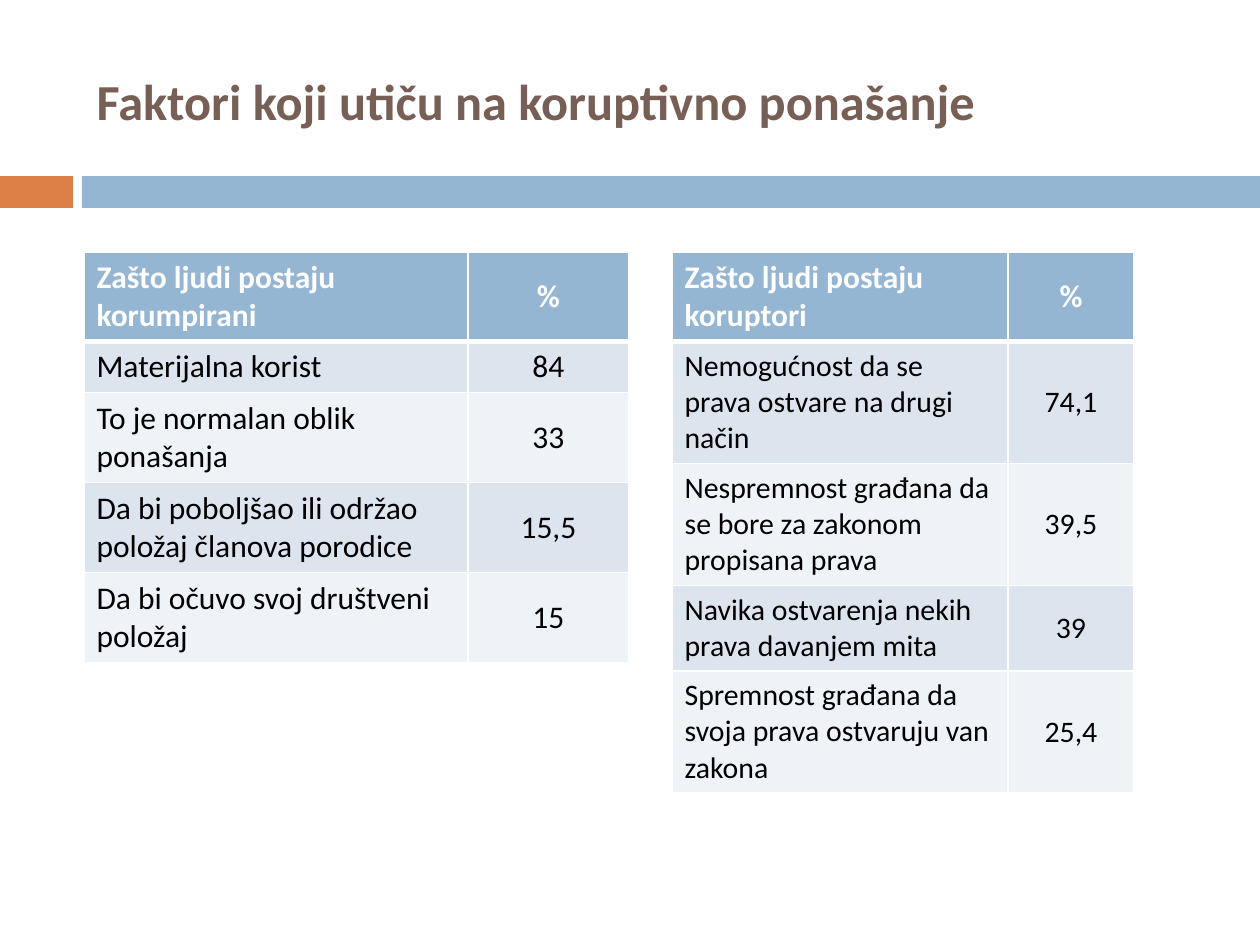
from lxml.etree import SubElement
from pptx import Presentation
from pptx.dml.color import RGBColor
from pptx.enum.shapes import MSO_SHAPE as Shape
from pptx.enum.text import MSO_ANCHOR as Anchor, MSO_AUTO_SIZE as AutoSize, PP_ALIGN as Align
from pptx.oxml.ns import qn
from pptx.util import Emu, Pt

COLORS = {
    "title": "775F55", "accent": "DD8047", "blue": "94B6D2", "white": "FFFFFF",
    "text": "000000", "odd": "DCE5EE", "even": "EEF3F7",
}
SCALE = 914400 / 126

RECIPIENTS = [
    ("Zašto ljudi postaju korumpirani", "%"),
    ("Materijalna korist", "84"),
    ("To je normalan oblik ponašanja", "33"),
    ("Da bi poboljšao ili održao položaj članova porodice", "15,5"),
    ("Da bi očuvo svoj društveni položaj", "15"),
]
GIVERS = [
    ("Zašto ljudi postaju koruptori", "%"),
    ("Nemogućnost da se prava ostvare na drugi način", "74,1"),
    ("Nespremnost građana da se bore za zakonom propisana prava", "39,5"),
    ("Navika ostvarenja nekih prava davanjem mita", "39"),
    ("Spremnost građana da svoja prava ostvaruju van zakona", "25,4"),
]


def px(n):
    return Emu(round(n * SCALE))


def rgb(name):
    return RGBColor.from_string(COLORS[name])


def write(tf, text, size=18, color="text", bold=False, align=Align.LEFT):
    p = tf.paragraphs[0]
    p.alignment = align
    r = p.add_run()
    r.text = text
    r.font.name = "Calibri"
    r.font.size = Pt(size)
    r.font.bold = bold
    r.font.color.rgb = rgb(color)


def add_borders(cell, bottom=1, top=1):
    """Draw white cell borders; top and bottom widths are in points."""
    tc_pr = cell._tc.get_or_add_tcPr()
    for side, width in (("L", 1), ("R", 1), ("T", top), ("B", bottom)):
        ln = SubElement(tc_pr, qn(f"a:ln{side}"), w=str(Pt(width)))
        fill = SubElement(ln, qn("a:solidFill"))
        SubElement(fill, qn("a:srgbClr"), val=COLORS["white"])


class SlideBuilder:
    def __init__(self, slide, header_size=18):
        self.slide = slide
        self.header_size = header_size

    def title(self, text, x, y, w, h):
        sp = self.slide.shapes.title
        sp.left, sp.top, sp.width, sp.height = map(px, (x, y, w, h))
        tf = sp.text_frame
        tf.word_wrap = True
        tf.auto_size = AutoSize.NONE
        tf.vertical_anchor = Anchor.MIDDLE
        write(tf, text, size=28.8, color="title", bold=True)

    def bar(self, x, y, w, h, color):
        sp = self.slide.shapes.add_shape(Shape.RECTANGLE, *map(px, (x, y, w, h)))
        sp.shadow.inherit = False
        sp.fill.solid()
        sp.fill.fore_color.rgb = rgb(color)
        sp.line.fill.background()

    def table(self, rows, x, y, widths, heights, size, label_anchor):
        frame = self.slide.shapes.add_table(
            len(rows), len(widths), *map(px, (x, y, sum(widths), sum(heights))))
        table = frame.table
        for column, width in zip(table.columns, widths):
            column.width = px(width)
        for i, (row, height) in enumerate(zip(rows, heights)):
            table.rows[i].height = px(height)
            for j, text in enumerate(row):
                self.cell(table.cell(i, j), text, i, j, size, label_anchor)

    def cell(self, cell, text, i, j, size, label_anchor):
        header = i == 0
        add_borders(cell, bottom=3 if header else 1, top=3 if i == 1 else 1)
        cell.fill.solid()
        cell.fill.fore_color.rgb = rgb("blue" if header else "odd" if i % 2 else "even")
        if j:
            cell.vertical_anchor = Anchor.MIDDLE
        else:
            cell.vertical_anchor = Anchor.TOP if header else label_anchor
        write(cell.text_frame, text,
              size=self.header_size if header else size,
              color="white" if header else "text",
              bold=header, align=Align.CENTER if j else Align.LEFT)


def main():
    prs = Presentation()
    prs.slide_width, prs.slide_height = px(1260), px(945)
    s = SlideBuilder(prs.slides.add_slide(prs.slide_layouts[5]))
    s.bar(0, 176, 73, 32, "accent")
    s.bar(82, 176, 1178, 32, "blue")
    s.title("Faktori koji utiču na koruptivno ponašanje", 84, 32, 1124, 136)
    s.table(RECIPIENTS, 84, 252, (384, 161), (89, 51, 90, 90, 90),
            size=18, label_anchor=Anchor.MIDDLE)
    s.table(GIVERS, 672, 252, (336, 126), (89, 122, 122, 85, 122),
            size=17, label_anchor=Anchor.TOP)
    prs.save("out.pptx")


if __name__ == "__main__":
    main()
